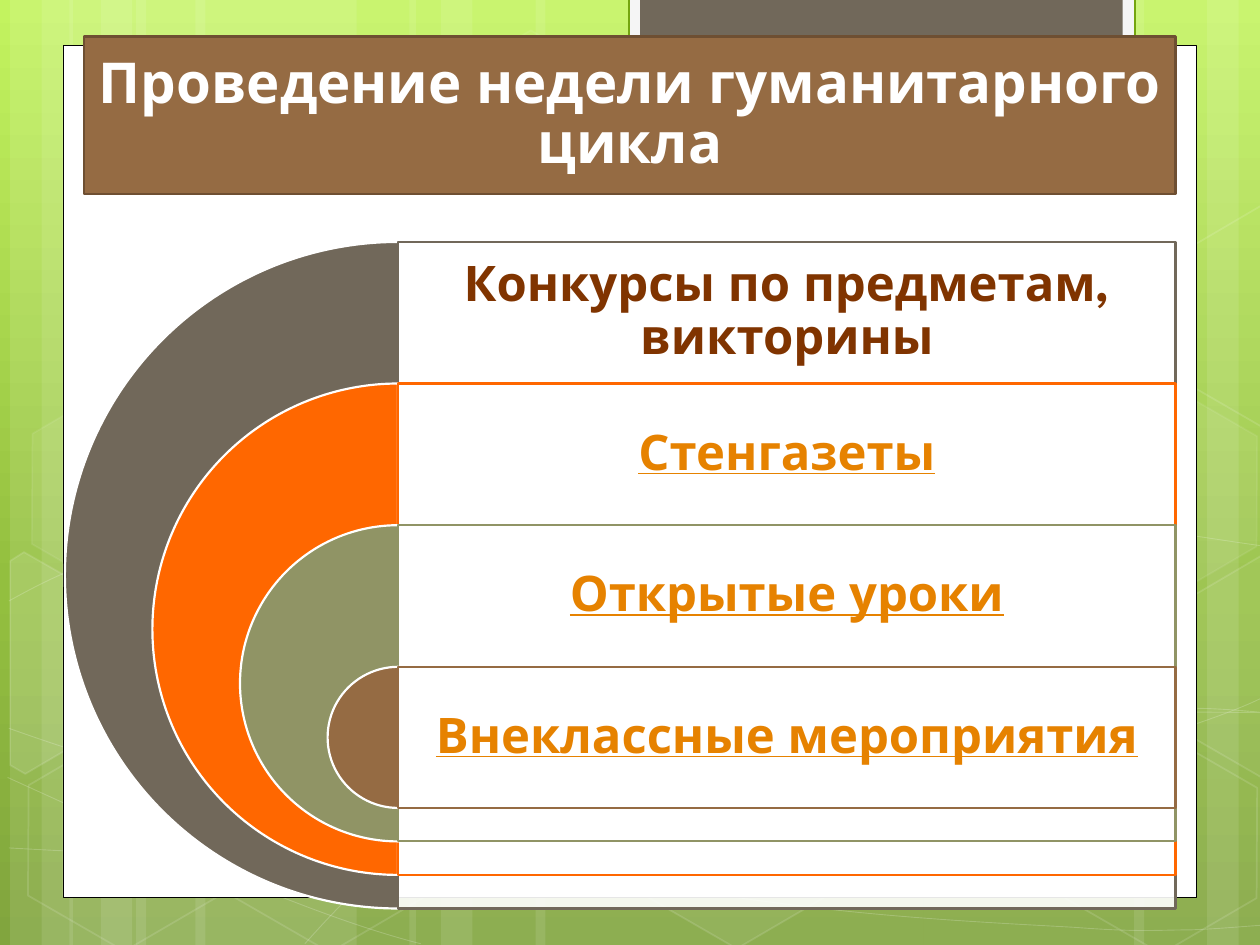
from copy import deepcopy
from math import cos, radians, sin
from pptx import Presentation
from pptx.dml.color import RGBColor as RGB
from pptx.enum.shapes import MSO_SHAPE as Kind
from pptx.enum.text import MSO_ANCHOR as Anchor, PP_ALIGN as Align
from pptx.oxml import parse_xml
from pptx.oxml.ns import nsdecls, qn
from pptx.util import Inches, Pt

THEME = {
    "font": "League Spartan", "title": 32.2, "body": 28,
    "white": "FFFFFF", "black": "000000", "brown": "956B43", "edge": "6E4F32",
    "taupe": "71685A", "tab": "F5F5F5", "green": "74A510",
    "sky": [(0, "C3F35F"), (0.62, "93BF3F"), (1, "81A53E")],
}
WHITE = THEME["white"]
TILT = 30
TITLE = "Проведение недели гуманитарного цикла"
# text, ring colour, text colour, underlined
LEVELS = [
    ("Конкурсы по предметам, викторины", THEME["taupe"], "803400", False),
    ("Стенгазеты", "FF6700", "E68200", True),
    ("Открытые уроки", "909465", "E68200", True),
    ("Внеклассные мероприятия", THEME["brown"], "E68200", True),
]
# left, width, turn
STRIPS = [
    (1.08, 1.75, 0), (0.08, 0.5, 0), (0.33, 0.83, 0),
    (1.55, 1.75, 0), (0.55, 0.5, 0), (0.8, 0.83, 0),
    (7.33, 1.75, 180), (9.58, 0.5, 180), (9, 0.83, 180),
    (4.25, 3.08, 0), (3.25, 0.5, 0), (3.5, 0.83, 0),
]
# each wave: a start, then two controls and an end per curve
WAVES = [
    [(0.07, 6.73), (0.61, 6.76), (1.15, 6.79), (1.9, 6.78), (2.65, 6.77), (3.58, 6.75),
     (4.58, 6.65), (5.58, 6.55), (7, 6.36), (7.92, 6.17), (8.83, 5.98), (9.77, 5.68),
     (10.07, 5.51)],
    [(0.07, 4.77), (0.36, 4.61), (0.65, 4.46), (1.21, 4.31), (1.78, 4.16), (2.59, 3.94),
     (3.47, 3.87), (4.36, 3.8), (5.44, 3.79), (6.54, 3.87), (7.64, 3.95), (9.47, 4.26),
     (10.07, 4.34)],
    [(0.06, 6.17), (1.27, 6.72), (2.47, 7.27), (3.34, 7.49)],
    [(0.07, 5.78), (0.38, 5.89), (0.7, 6), (1.28, 6.16), (1.86, 6.31), (2.73, 6.56),
     (3.57, 6.73), (4.4, 6.9), (5.45, 7.08), (6.28, 7.18), (7.11, 7.29), (8, 7.33),
     (8.53, 7.36), (9.05, 7.4), (9.19, 7.38), (9.45, 7.38), (9.71, 7.37), (9.89, 7.35),
     (10.07, 7.34)],
    [(2.42, 7.49), (2.6, 7.29), (2.78, 7.09), (3.02, 6.91), (3.26, 6.73), (3.6, 6.53),
     (3.88, 6.39), (4.16, 6.25), (4.33, 6.19), (4.7, 6.09), (5.06, 5.99), (5.73, 5.85),
     (6.08, 5.78), (6.44, 5.71), (6.49, 5.71), (6.8, 5.69), (7.11, 5.66), (7.6, 5.63),
     (7.94, 5.62), (8.29, 5.61), (8.86, 5.62), (8.86, 5.62), (8.86, 5.62), (9.53, 5.62),
     (9.53, 5.62), (9.71, 5.63), (9.88, 5.64), (9.97, 5.65), (10.06, 5.66), (10.03, 5.65),
     (10.06, 5.66)],
]
WAVES[4].pop(22)
# left, top, fill opacity, line opacity
HEXES = [
    (3.34, 0.36, 4, 8), (4.97, 5.89, 6, 12), (0.11, 5.91, 0, 12),
    (0.14, 3.12, 7, 8), (1.74, 5.92, 0, 12), (7.53, 4.53, 10, 12),
    (8.34, 5.93, 0, 12), (8.34, 3.14, 7, 8),
]
# centre, corners as they stand after the tilt, fill opacity
CUT_HEXES = [
    ((0.36, 5.35), [(0.08, 4.45), (0.19, 4.38), (0.96, 4.82), (0.95, 5.7),
                    (0.2, 6.14), (0.08, 6.07)], 10),
    ((9.85, 5.2), [(9.26, 4.85), (10.01, 4.41), (10.09, 4.46), (10.09, 6.13),
                   (10.02, 6.17), (9.26, 5.73)], 4),
    ((9.85, 2.41), [(9.26, 2.07), (10.01, 1.63), (10.1, 1.68), (10.09, 3.35),
                    (10.02, 3.39), (9.26, 2.95)], 0),
]


def fade(shape, route, alpha):
    """Set the opacity, in percent, of the solid fill found at route."""
    if alpha < 100:
        color = shape.element.spPr.find("/".join(map(qn, route)))[0]
        color.append(parse_xml(f'<a:alpha {nsdecls("a")} val="{alpha * 1000}"/>'))


def paint(shape, fill=None, line=None, width=1.25, alpha=100, line_alpha=100):
    shape.shadow.inherit = False
    if fill and alpha:
        shape.fill.solid()
        shape.fill.fore_color.rgb = RGB.from_string(fill)
        fade(shape, ["a:solidFill"], alpha)
    else:
        shape.fill.background()
    if line:
        shape.line.color.rgb = RGB.from_string(line)
        shape.line.width = Pt(width)
        fade(shape, ["a:ln", "a:solidFill"], line_alpha)
    else:
        shape.line.fill.background()
    return shape


def add(slide, kind, box, **look):
    return paint(slide.shapes.add_shape(kind, *map(Inches, box)), **look)


def trace(slide, points, close, **look):
    spots = [(Inches(x), Inches(y)) for x, y in points]
    pen = slide.shapes.build_freeform(*spots[0])
    pen.add_line_segments(spots[1:], close=close)
    return paint(pen.convert_to_shape(), **look)


def bend(shape):
    """Join each three line segments of an outline into one cubic curve."""
    track = shape.element.spPr.find(".//" + qn("a:path"))
    legs = track.findall(qn("a:lnTo"))
    for i in range(0, len(legs), 3):
        curve = parse_xml(f'<a:cubicBezTo {nsdecls("a")}/>')
        for leg in legs[i:i + 3]:
            curve.append(leg[0])
            track.remove(leg)
        track.append(curve)


def untilt(center, points):
    turn, (cx, cy) = radians(-TILT), center
    return [(cx + (x - cx) * cos(turn) - (y - cy) * sin(turn),
             cy + (x - cx) * sin(turn) + (y - cy) * cos(turn)) for x, y in points]


def write(shape, text, size, color, inset, underline=False):
    frame = shape.text_frame
    frame.word_wrap = True
    frame.vertical_anchor = Anchor.MIDDLE
    frame.margin_left = frame.margin_right = Inches(inset[0])
    frame.margin_top = frame.margin_bottom = Inches(inset[1])
    para = frame.paragraphs[0]
    para.text = text
    para.alignment = Align.CENTER
    para.line_spacing = 0.9
    font = para.font
    font.name, font.size, font.bold = THEME["font"], Pt(size), True
    font.color.rgb = RGB.from_string(color)
    if underline:
        font.underline = True


def draw_sky(slide):
    fill = slide.background.fill
    fill.gradient()
    fill.gradient_angle = 270
    stops = slide.element.find(".//" + qn("a:gsLst"))
    stops.append(deepcopy(stops[0]))
    for stop, (place, color) in zip(fill.gradient_stops, THEME["sky"]):
        stop.position = place
        stop.color.rgb = RGB.from_string(color)


def draw_decor(slide):
    for left, width, turn in STRIPS:
        add(slide, Kind.RECTANGLE, (left, 0, width, 7.5), fill=WHITE, alpha=10).rotation = turn
    for nodes in WAVES:
        bend(trace(slide, nodes, False, line=WHITE, width=0.5, line_alpha=20))
    for left, top, alpha, edge in HEXES:
        cell = add(slide, Kind.HEXAGON, (left, top, 1.75, 1.52), fill=WHITE, alpha=alpha,
                   line=WHITE, width=1, line_alpha=edge)
        cell.adjustments[0], cell.adjustments[1] = 0.285, 1.155
        cell.rotation = TILT
    for center, points, alpha in CUT_HEXES:
        cell = trace(slide, untilt(center, points), True, fill=WHITE, alpha=alpha,
                     line=WHITE, width=1, line_alpha=12)
        cell.rotation = TILT
    add(slide, Kind.RECTANGLE, (0.5, 0.36, 9, 6.76), fill=WHITE, line=THEME["black"], width=0.5)
    add(slide, Kind.RECTANGLE, (4.99, -0.02, 4.02, 0.76), fill=THEME["tab"], line=THEME["green"])
    add(slide, Kind.RECTANGLE, (5.08, -0.02, 3.83, 0.68), fill=THEME["taupe"])


def draw_levels(slide):
    mid, top, wide, row, size, shrink = 3.16, 1.92, 6.17, 1.12, 5.29, 1.39
    for i, (text, color, ink, under) in enumerate(LEVELS):
        y, side = top + i * 1.124, size - i * shrink
        ring = add(slide, Kind.PIE, (mid - side / 2, y, side, side), fill=color, line=WHITE)
        ring.adjustments[0], ring.adjustments[1] = 54, 162
        add(slide, Kind.RECTANGLE, (mid, y, wide, side), fill=WHITE, alpha=90, line=color)
        label = slide.shapes.add_textbox(*map(Inches, (mid, y, wide, row)))
        write(label, text, THEME["body"], ink, (0.12, 0.12), under)


def main():
    deck = Presentation()
    deck.slide_width, deck.slide_height = Inches(10), Inches(7.5)
    slide = deck.slides.add_slide(deck.slide_layouts[6])
    draw_sky(slide)
    draw_decor(slide)
    draw_levels(slide)
    head = add(slide, Kind.RECTANGLE, (0.67, 0.29, 8.66, 1.25),
               fill=THEME["brown"], line=THEME["edge"])
    write(head, TITLE, THEME["title"], WHITE, (0.1, 0.05))
    deck.save("out.pptx")


if __name__ == "__main__":
    main()
